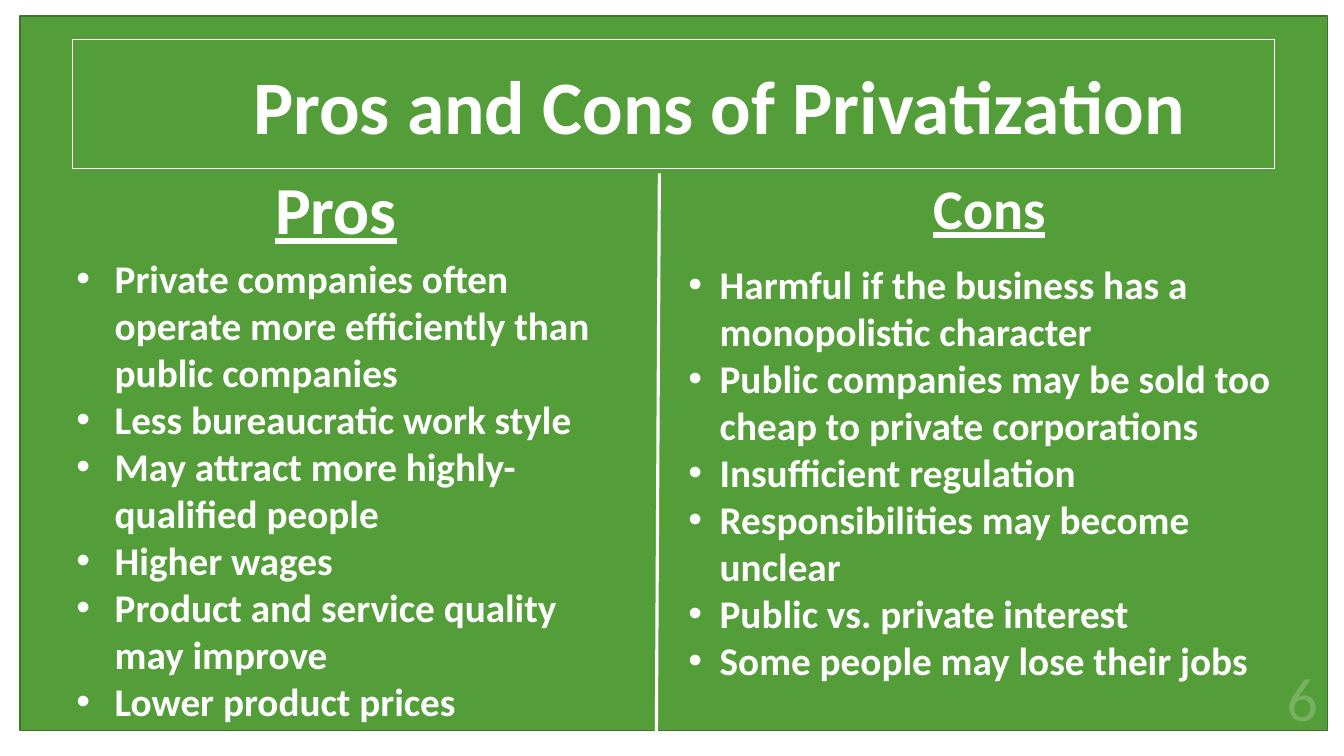
from lxml import etree
from pptx import Presentation
from pptx.dml.color import RGBColor
from pptx.enum.shapes import MSO_CONNECTOR as Connector, MSO_SHAPE as Shape
from pptx.enum.text import MSO_ANCHOR as Anchor, MSO_AUTO_SIZE as AutoSize, PP_ALIGN as Align
from pptx.oxml.ns import qn
from pptx.util import Inches, Pt

GREEN = RGBColor(0x54, 0x9E, 0x39)
DARK_GREEN = RGBColor(0x3E, 0x75, 0x2A)
WHITE = RGBColor(0xFF, 0xFF, 0xFF)

deck = Presentation()
deck.slide_width, deck.slide_height = Inches(13.33), Inches(7.5)
page = deck.slides.add_slide(deck.slide_layouts[6])


def add_panel(left, top, width, height, outline):
    panel = page.shapes.add_shape(
        Shape.RECTANGLE, Inches(left), Inches(top), Inches(width), Inches(height))
    panel.shadow.inherit = False
    panel.fill.solid()
    panel.fill.fore_color.rgb = GREEN
    panel.line.color.rgb = outline
    panel.line.width = Pt(1)
    return panel


def write(frame, lines, size, bold=True, underline=None, align=Align.LEFT):
    """Fill a text frame with one white paragraph per line."""
    frame.word_wrap = True
    for index, line in enumerate(lines):
        para = frame.paragraphs[0] if index == 0 else frame.add_paragraph()
        para.text = line
        para.alignment = align
        font = para.font
        font.name, font.size = "Calibri", Pt(size)
        font.bold, font.underline = bold, underline
        font.color.rgb = WHITE
        # Runs carry the colour so that it wins over any shape style
        para.runs[0].font.color.rgb = WHITE


# Green background and title
add_panel(0.2, 0.16, 12.97, 7.09, DARK_GREEN)
title = add_panel(0.72, 0.39, 11.92, 1.28, WHITE).text_frame
title.vertical_anchor = Anchor.MIDDLE
title.margin_left = Inches(1.79)
write(title, ["Pros and Cons of Privatization"], 54)

# Bulleted columns: left, top, width, height, bullet indent, points
columns = [
    (0.66, 2.47, 5.66, 4.81, 0.38, [
        "Private companies often operate more efficiently than public companies",
        "Less bureaucratic work style",
        "May attract more highly-qualified people",
        "Higher wages",
        "Product and service quality may improve",
        "Lower product prices",
    ]),
    (6.73, 2.53, 5.99, 4.34, 0.31, [
        "Harmful if the business has a monopolistic character",
        "Public companies may be sold too cheap to private corporations",
        "Insufficient regulation",
        "Responsibilities may become unclear",
        "Public vs. private interest",
        "Some people may lose their jobs",
    ]),
]
for left, top, width, height, indent, points in columns:
    box = page.shapes.add_textbox(
        Inches(left), Inches(top), Inches(width), Inches(height))
    write(box.text_frame, points, 28)
    box.text_frame.auto_size = AutoSize.SHAPE_TO_FIT_TEXT
    for para in box.text_frame.paragraphs:
        settings = para._p.get_or_add_pPr()
        settings.set("marL", str(Inches(indent)))
        settings.set("indent", str(-Inches(indent)))
        bullet_font = etree.Element(qn("a:buFont"), typeface="Arial")
        bullet = etree.Element(qn("a:buChar"), char="•")
        # Bullet settings come before the default run properties
        settings.insert(0, bullet_font)
        settings.insert(1, bullet)

# Divider between the columns
divider = page.shapes.add_connector(
    Connector.STRAIGHT, Inches(6.54), Inches(1.72), Inches(6.51), Inches(7.29))
divider.line.color.rgb = WHITE
divider.line.width = Pt(2.25)
etree.SubElement(divider._element.spPr, qn("a:effectLst"))

# Column headings
headings = [
    ("Pros", 2.63, 1.61, 4.1, 0.91, 48),
    ("Cons", 9.16, 1.67, 2.16, 0.77, 40),
]
for heading, left, top, width, height, size in headings:
    box = page.shapes.add_textbox(
        Inches(left), Inches(top), Inches(width), Inches(height))
    write(box.text_frame, [heading], size, underline=True)
    box.text_frame.auto_size = AutoSize.SHAPE_TO_FIT_TEXT

# Faint page number
number = page.shapes.add_textbox(
    Inches(9.97), Inches(5.8), Inches(3.2), Inches(1.53)).text_frame
number.vertical_anchor = Anchor.BOTTOM
write(number, ["6"], 44, bold=False, align=Align.RIGHT)
for color in number._txBody.iter(qn("a:srgbClr")):
    etree.SubElement(color, qn("a:alpha"), val="20000")

deck.save("out.pptx")
